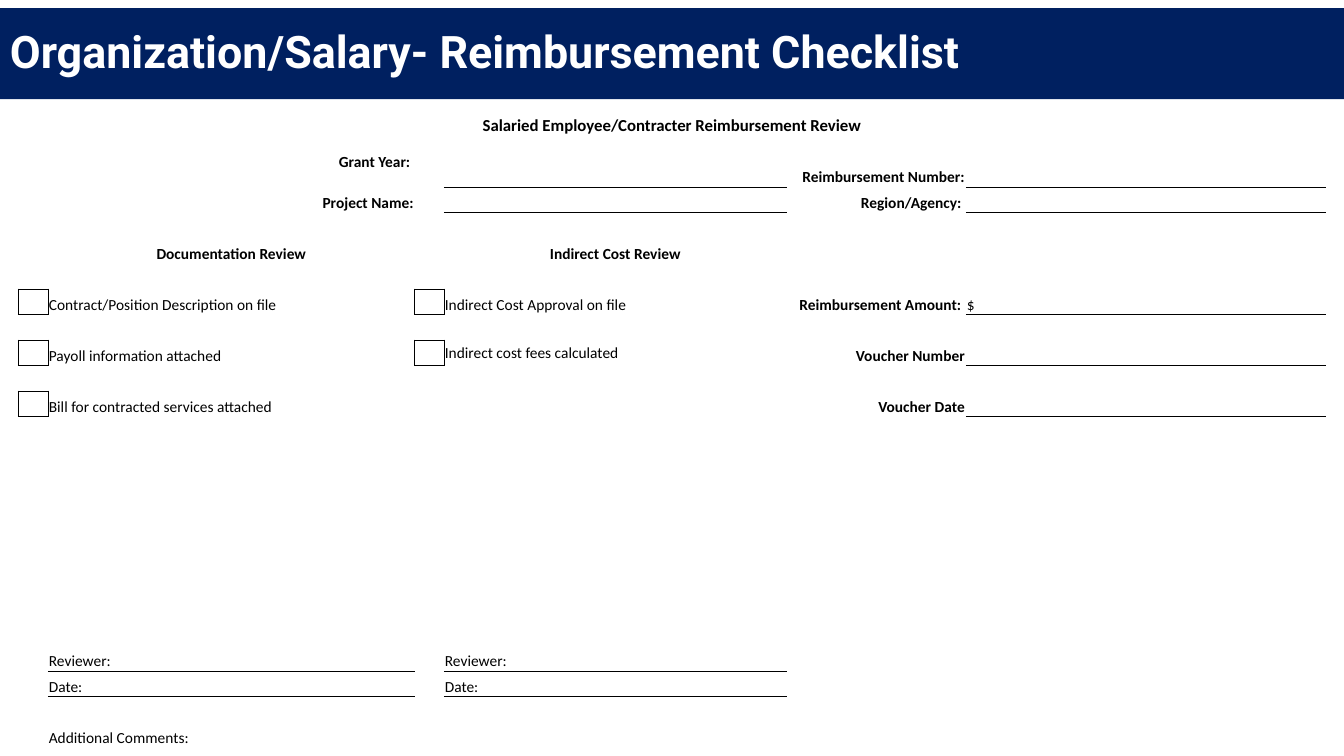
from lxml import etree
from pptx import Presentation
from pptx import util as u
from pptx.dml.color import RGBColor
from pptx.enum import shapes, text
from pptx.oxml import ns

NAVY, WHITE, BLACK = "002060", "FFFFFF", "000000"
LEFT, CENTER, RIGHT = text.PP_ALIGN.LEFT, text.PP_ALIGN.CENTER, text.PP_ALIGN.RIGHT
MIDDLE, BOTTOM = text.MSO_ANCHOR.MIDDLE, text.MSO_ANCHOR.BOTTOM
NO_STYLE = "{2D5ABB26-0587-4C30-8999-92F81FD0307C}"


def color(value):
    return RGBColor.from_string(value)


def draw_edges(cell, sides):
    """Draw thin black borders; sides must follow the order L, R, T, B."""
    properties = cell._tc.get_or_add_tcPr()
    for index, side in enumerate(sides):
        line = etree.Element(ns.qn(f"a:ln{side}"), w="6350")
        fill = etree.SubElement(line, ns.qn("a:solidFill"))
        etree.SubElement(fill, ns.qn("a:srgbClr"), val=BLACK)
        properties.insert(index, line)


deck = Presentation()
deck.slide_width, deck.slide_height = u.Pt(960), u.Pt(540)
page = deck.slides.add_slide(deck.slide_layouts[6])

# Title band
band = page.shapes.add_shape(
    shapes.MSO_SHAPE.RECTANGLE, 0, u.Pt(5.8), u.Pt(960), u.Pt(65))
band.shadow.inherit = False
band.fill.solid()
band.fill.fore_color.rgb = color(NAVY)
band.line.fill.background()

title = page.shapes.add_textbox(0, u.Pt(5.8), u.Pt(975), u.Pt(65))
title.text_frame.word_wrap = True
title.text_frame.vertical_anchor = MIDDLE
title.text_frame.text = "Organization/Salary- Reimbursement Checklist"
para = title.text_frame.paragraphs[0]
para.line_spacing = 0.9
span = para.runs[0]
span.font.name, span.font.size, span.font.bold = "Roboto", u.Pt(32), True
span.font.color.rgb = color(WHITE)

# Checklist grid
widths = [21.2, 262.1, 20.8, 245, 127.9, 257.1]
heights = [19, 36.1] + [18.2] * 22
frame = page.shapes.add_table(
    len(heights), len(widths), u.Pt(13), u.Pt(78.5),
    u.Pt(sum(widths)), u.Pt(sum(heights)))
checklist = frame.table
checklist.first_row = checklist.horz_banding = False
checklist._tbl.tblPr.find(ns.qn("a:tableStyleId")).text = NO_STYLE
for column, width in zip(checklist.columns, widths):
    column.width = u.Pt(width)
for row, height in zip(checklist.rows, heights):
    row.height = u.Pt(height)

# (row, column): wording, alignment, bold
entries = {
    (0, 0): ("Salaried Employee/Contracter Reimbursement Review", CENTER, True),
    (1, 1): ("Grant Year: ", RIGHT, True),
    (1, 4): ("Reimbursement Number:", RIGHT, True),
    (2, 1): ("Project Name:", RIGHT, True),
    (2, 4): ("Region/Agency: ", RIGHT, True),
    (4, 1): ("Documentation Review", CENTER, True),
    (4, 3): ("Indirect Cost Review", CENTER, True),
    (5, 4): ("Reimbursement Amount: ", RIGHT, True),
    (6, 1): ("Contract/Position Description on file", LEFT, False),
    (6, 3): ("Indirect Cost Approval on file", LEFT, False),
    (6, 5): ("$", LEFT, False),
    (8, 1): ("Payoll information attached", LEFT, False),
    (8, 3): ("Indirect cost fees calculated", LEFT, False),
    (8, 4): ("Voucher Number", RIGHT, True),
    (10, 1): ("Bill for contracted services attached", LEFT, False),
    (10, 4): ("Voucher Date", RIGHT, True),
    (20, 1): ("Reviewer:", LEFT, False),
    (20, 3): ("Reviewer:", LEFT, False),
    (21, 1): ("Date:", LEFT, False),
    (21, 3): ("Date:", LEFT, False),
    (23, 1): ("Additional Comments:", LEFT, False),
}
centered_vertically = [(1, 1), (8, 3)]

for r in range(len(heights)):
    for c in range(len(widths)):
        cell = checklist.cell(r, c)
        cell.fill.background()
        cell.margin_left = cell.margin_right = cell.margin_top = u.Pt(0.7)
        cell.margin_bottom = 0
        para = cell.text_frame.paragraphs[0]
        if (r, c) not in entries:
            # Keeps empty rows from growing to the default text size
            etree.SubElement(para._p, ns.qn("a:endParaRPr"), sz="1100")
            continue
        wording, alignment, bold = entries[r, c]
        cell.vertical_anchor = MIDDLE if (r, c) in centered_vertically else BOTTOM
        para.text = wording
        para.alignment = alignment
        font = para.runs[0].font
        font.name, font.bold = "Calibri", bold
        font.size = u.Pt(12 if r == 0 else 11)
        font.color.rgb = color(BLACK)

checklist.cell(0, 0).merge(checklist.cell(0, 5))
checklist.cell(5, 4).merge(checklist.cell(6, 4))

# Tick boxes and write-in lines
for r, c in [(6, 0), (8, 0), (10, 0), (6, 2), (8, 2)]:
    draw_edges(checklist.cell(r, c), "LRTB")
for r, c in [(1, 3), (2, 3), (1, 5), (2, 5), (6, 5), (8, 5), (10, 5),
             (20, 1), (21, 1), (20, 3), (21, 3)]:
    draw_edges(checklist.cell(r, c), "B")

deck.save("out.pptx")
